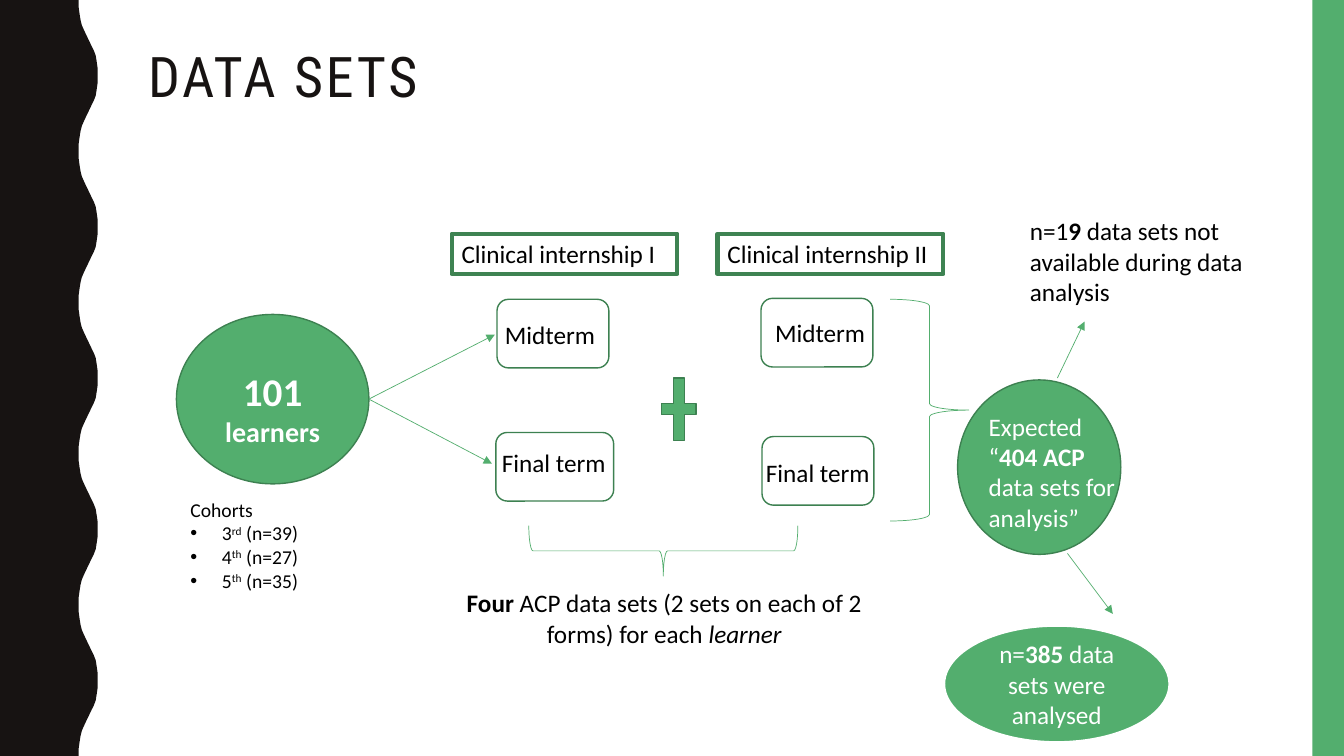
"""Build the data sets slide: learners, internship terms and resulting data sets."""
from dataclasses import dataclass
from typing import Any, NamedTuple, Optional

import lxml.etree
import pptx
import pptx.dml.color
import pptx.enum.shapes
import pptx.enum.text
import pptx.oxml.ns
import pptx.util

Pt = pptx.util.Pt
SHAPE = pptx.enum.shapes.MSO_SHAPE
ALIGN = pptx.enum.text.PP_ALIGN
ANCHOR = pptx.enum.text.MSO_ANCHOR
qn = pptx.oxml.ns.qn

GREEN, DARK_GREEN, FRAME_GREEN = "53AE6E", "3D8151", "3E8352"
INK, BLACK, WHITE = "171312", "000000", "FFFFFF"


class Box(NamedTuple):
    left: float
    top: float
    width: float
    height: float


@dataclass(frozen=True)
class Run:
    text: str
    bold: bool = False
    italic: bool = False
    size: float = 18
    raised: bool = False


@dataclass(frozen=True)
class Figure:
    kind: Any
    box: Box
    fill: Optional[str] = None
    line: Optional[str] = None
    weight: float = 1
    rotation: float = 0


@dataclass(frozen=True)
class Wording:
    paragraphs: list[list[Run]]
    color: str = BLACK
    align: Any = ALIGN.LEFT
    wrap: bool = True


@dataclass(frozen=True)
class Term:
    name: str
    frame: Box
    label: Box


@dataclass(frozen=True)
class Arrow:
    start: tuple[float, float]
    end: tuple[float, float]


HALF_WAVE = [(0, 56.2), (5, 56.2), (10, 56.9), (14.4, 57.6), (18, 58.5), (21, 59.8),
             (24, 61.2), (30, 64.1), (33, 65.5), (36, 67), (39.6, 68.4), (44, 69.1),
             (49, 69.8), (54, 69.8)]
WAVE_LENGTH, WAVE_COUNT = 108, 5

INTERNSHIPS = [("Clinical internship I", 322.6), ("Clinical internship II", 512.6)]
TERMS = [
    Term("Midterm", Box(355, 213.8, 79.9, 49), Box(353.5, 224.6, 82.8, 28.8)),
    Term("Final term", Box(354.2, 308.9, 84.2, 49), Box(351.4, 316.1, 91.4, 28.8)),
    Term("Midterm", Box(543.6, 213.1, 79.9, 49), Box(546.5, 223.2, 82.8, 28.8)),
    Term("Final term", Box(544.3, 311.8, 79.9, 49), Box(540, 323.3, 95, 28.8)),
]
ARROWS = [
    Arrow((263.5, 285.1), (353.5, 239)),
    Arrow((263.5, 285.1), (351.4, 331.2)),
    Arrow((755.3, 270), (774.7, 229.7)),
    Arrow((762.5, 395.3), (794.9, 438.5)),
]
SYMBOLS = [
    Figure(SHAPE.RIGHT_BRACE, Box(455.8, 297.4, 36, 192.2), None, GREEN, 0.5, 90),
    Figure(SHAPE.RIGHT_BRACE, Box(635.8, 213.8, 56.2, 158.4), None, GREEN, 0.5),
    Figure(SHAPE.MATH_PLUS, Box(468, 262.1, 33.8, 60.5), GREEN, DARK_GREEN),
    Figure(SHAPE.OVAL, Box(684, 271.4, 116.6, 124.6), GREEN, DARK_GREEN),
]
NOTES = [
    (Box(324.7, 416.2, 299.5, 51), Wording([[
        Run("Four", bold=True), Run(" ACP data sets (2 sets on each of 2 forms) for each "),
        Run("learner", italic=True)]], align=ALIGN.CENTER)),
    (Box(699.1, 290.2, 108.7, 94.3), Wording([[
        Run("Expected “"), Run("404 ACP ", bold=True), Run("data sets for analysis”")]], WHITE)),
    (Box(728.6, 150.5, 201.6, 72.7), Wording([[
        Run("n=1"), Run("9", bold=True),
        Run(" data sets not available during data analysis")]])),
]
COHORTS = [("3", "rd", 39), ("4", "th", 27), ("5", "th", 35)]


def rgb(color: str) -> Any:
    return pptx.dml.color.RGBColor.from_string(color)


def paint(shape: Any, fill: Optional[str], line: Optional[str], weight: float = 1) -> None:
    shape.shadow.inherit = False
    if fill:
        shape.fill.solid()
        shape.fill.fore_color.rgb = rgb(fill)
    else:
        shape.fill.background()
    if line:
        shape.line.color.rgb = rgb(line)
        shape.line.width = Pt(weight)
    else:
        shape.line.fill.background()


def draw_figure(slide: Any, figure: Figure) -> Any:
    shape = slide.shapes.add_shape(figure.kind, *map(Pt, figure.box))
    paint(shape, figure.fill, figure.line, figure.weight)
    shape.rotation = figure.rotation
    return shape


def write(frame: Any, wording: Wording) -> None:
    frame.word_wrap = wording.wrap
    for index, runs in enumerate(wording.paragraphs):
        paragraph = frame.add_paragraph() if index else frame.paragraphs[0]
        paragraph.alignment = wording.align
        for part in runs:
            run = paragraph.add_run()
            run.text = part.text
            run.font.name = "Calibri"
            run.font.size = Pt(part.size)
            run.font.bold = part.bold
            run.font.italic = part.italic
            run.font.color.rgb = rgb(wording.color)
            if part.raised:
                run.font._element.set("baseline", "30000")


def draw_note(slide: Any, box: Box, wording: Wording) -> Any:
    note = slide.shapes.add_textbox(*map(Pt, box))
    write(note.text_frame, wording)
    return note


def draw_arrow(slide: Any, arrow: Arrow) -> None:
    connector = slide.shapes.add_connector(
        pptx.enum.shapes.MSO_CONNECTOR.STRAIGHT, *map(Pt, arrow.start + arrow.end))
    connector.line.color.rgb = rgb(GREEN)
    connector.line.width = Pt(0.5)
    properties = connector._element.spPr
    lxml.etree.SubElement(properties.find(qn("a:ln")), qn("a:tailEnd"), type="triangle")
    lxml.etree.SubElement(properties, qn("a:effectLst"))


def draw_edges(slide: Any) -> None:
    wave = HALF_WAVE + [(WAVE_LENGTH - y, x) for y, x in reversed(HALF_WAVE[:-1])]
    outline = [(Pt(x), Pt(y + WAVE_LENGTH * turn)) for turn in range(WAVE_COUNT) for y, x in wave]
    builder = slide.shapes.build_freeform(0, 0)
    builder.add_line_segments(outline + [(0, Pt(540))], close=True)
    paint(builder.convert_to_shape(), INK, None)
    draw_figure(slide, Figure(SHAPE.RECTANGLE, Box(937.4, 0, 22.6, 540), GREEN))


def draw_title(slide: Any) -> None:
    title = slide.shapes.title
    title.left, title.top, title.width, title.height = map(Pt, (98.6, 30.2, 801.4, 52.6))
    title.text_frame.text = "DATA SETS"
    title.text_frame.vertical_anchor = ANCHOR.MIDDLE
    heading = title.text_frame.paragraphs[0]
    heading.alignment = ALIGN.LEFT
    heading.line_spacing = 0.9
    font = heading.runs[0].font
    font.name = "Roboto Condensed"
    font.size = Pt(40)
    font.color.rgb = rgb(INK)
    font._element.set("spc", "200")


def draw_cohorts(slide: Any) -> None:
    lines = [[Run("Cohorts", size=14)]] + [
        [Run(number, size=14), Run(suffix, size=14, raised=True), Run(f" (n={count})", size=14)]
        for number, suffix, count in COHORTS]
    cohorts = draw_note(slide, Box(128.9, 352.1, 92.9, 74.9), Wording(lines, wrap=False))
    for paragraph in cohorts.text_frame.paragraphs[1:]:
        properties = paragraph._p.get_or_add_pPr()
        properties.set("marL", str(Pt(22.5)))
        properties.set("indent", str(Pt(-22.5)))
        lxml.etree.SubElement(properties, qn("a:buFont"), typeface="Arial")
        lxml.etree.SubElement(properties, qn("a:buChar"), char="•")


def main() -> None:
    deck = pptx.Presentation()
    deck.slide_width, deck.slide_height = Pt(960), Pt(540)
    slide = deck.slides.add_slide(deck.slide_layouts[5])
    draw_edges(slide)
    draw_title(slide)
    for figure in SYMBOLS:
        draw_figure(slide, figure)
    learners = draw_figure(slide, Figure(
        SHAPE.OVAL, Box(126, 224.6, 137.5, 121), GREEN, DARK_GREEN))
    learners.text_frame.margin_top = Pt(15.6)
    write(learners.text_frame, Wording(
        [[Run("101 ", bold=True, size=28), Run("learners", bold=True, size=20)]],
        WHITE, ALIGN.CENTER))
    for name, left in INTERNSHIPS:
        internship = draw_figure(slide, Figure(
            SHAPE.RECTANGLE, Box(left, 167, 161.3, 28.8), None, FRAME_GREEN, 3))
        write(internship.text_frame, Wording([[Run(name)]]))
    for term in TERMS:
        draw_figure(slide, Figure(SHAPE.ROUNDED_RECTANGLE, term.frame, WHITE, DARK_GREEN))
        draw_note(slide, term.label, Wording([[Run(term.name)]]))
    for arrow in ARROWS:
        draw_arrow(slide, arrow)
    for box, wording in NOTES:
        draw_note(slide, box, wording)
    analysed = draw_figure(slide, Figure(
        SHAPE.OVAL, Box(673.2, 445.7, 163.4, 85.7), GREEN, WHITE, 4))
    write(analysed.text_frame, Wording(
        [[Run("n="), Run("385", bold=True), Run(" data sets were analysed")]],
        WHITE, ALIGN.CENTER))
    draw_cohorts(slide)
    deck.save("out.pptx")


if __name__ == "__main__":
    main()
